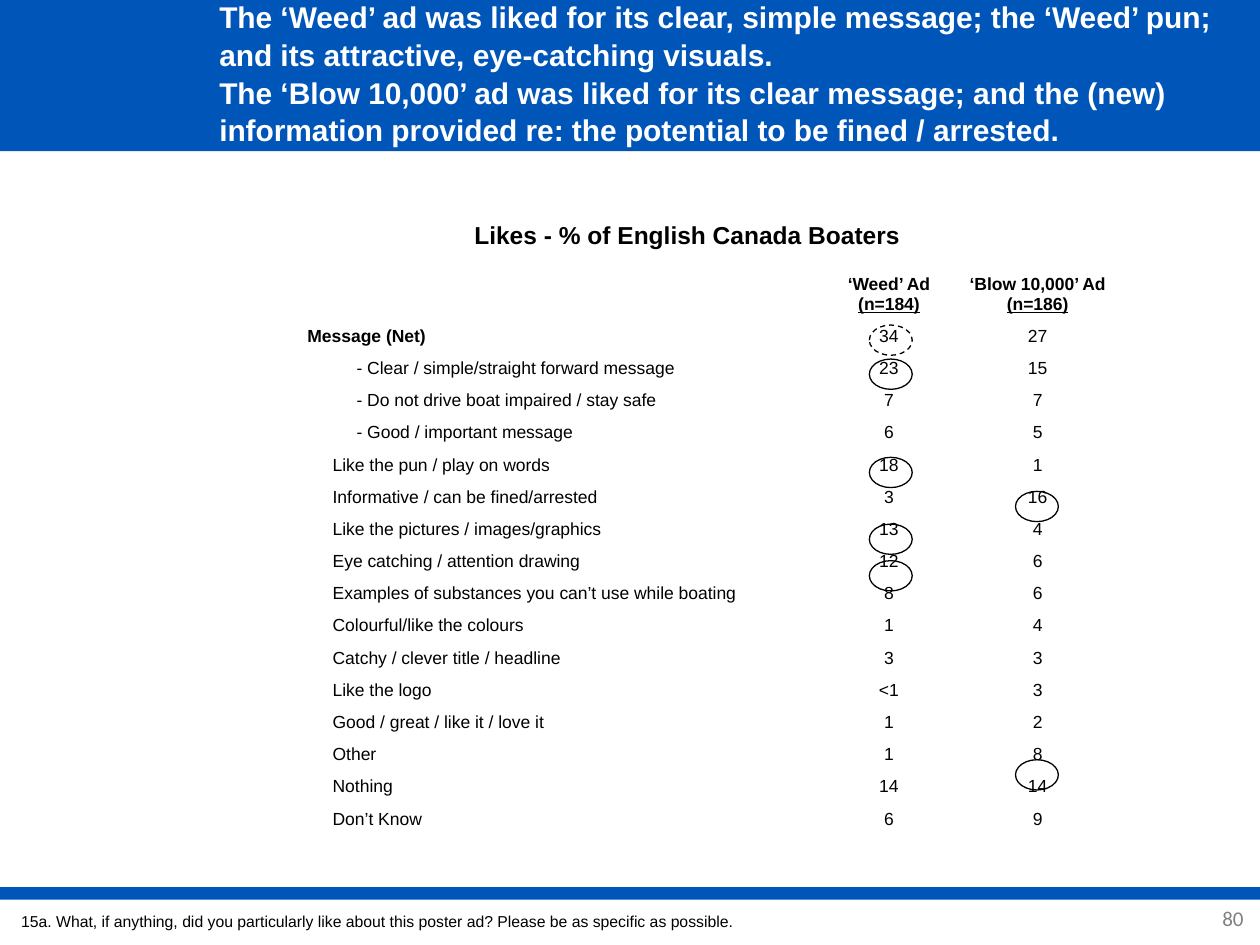
from copy import deepcopy

from pptx import Presentation
from pptx.dml.color import RGBColor
from pptx.enum.dml import MSO_LINE
from pptx.enum.shapes import MSO_SHAPE
from pptx.enum.text import MSO_ANCHOR, MSO_AUTO_SIZE, PP_ALIGN
from pptx.oxml.ns import qn
from pptx.util import Inches, Pt

LEFT, CENTER, RIGHT = PP_ALIGN.LEFT, PP_ALIGN.CENTER, PP_ALIGN.RIGHT
TOP, MIDDLE = MSO_ANCHOR.TOP, MSO_ANCHOR.MIDDLE
RECTANGLE, OVAL = MSO_SHAPE.RECTANGLE, MSO_SHAPE.OVAL
DASH = MSO_LINE.DASH
NO_AUTOFIT = MSO_AUTO_SIZE.NONE

COLORS = {"blue": "0055B9", "white": "FFFFFF", "black": "000000", "gray": "808080"}

TITLE = (
    "The ‘Weed’ ad was liked for its clear, simple message; the ‘Weed’ pun; "
    "and its attractive, eye-catching visuals.\v"
    "The ‘Blow 10,000’ ad was liked for its clear message; and the (new) "
    "information provided re: the potential to be fined / arrested."
)
QUESTION = (
    "15a. What, if anything, did you particularly like about this poster ad? "
    "Please be as specific as possible."
)
ADS = [("‘Weed’ Ad ", "(n=184)"), ("‘Blow 10,000’ Ad ", "(n=186)")]
NET, SUB, ITEM = 0, 0.39, 0.2
LIKES = [
    (NET, "Message (Net)", "34", "27"),
    (SUB, "- Clear / simple/straight forward message", "23", "15"),
    (SUB, "- Do not drive boat impaired / stay safe", "7", "7"),
    (SUB, "- Good / important message", "6", "5"),
    (ITEM, "Like the pun / play on words", "18", "1"),
    (ITEM, "Informative / can be fined/arrested", "3", "16"),
    (ITEM, "Like the pictures / images/graphics", "13", "4"),
    (ITEM, "Eye catching / attention drawing", "12", "6"),
    (ITEM, "Examples of substances you can’t use while boating", "8", "6"),
    (ITEM, "Colourful/like the colours", "1", "4"),
    (ITEM, "Catchy / clever title / headline", "3", "3"),
    (ITEM, "Like the logo", "<1", "3"),
    (ITEM, "Good / great / like it / love it", "1", "2"),
    (ITEM, "Other", "1", "8"),
    (ITEM, "Nothing", "14", "14"),
    (ITEM, "Don’t Know", "6", "9"),
]
COLUMN_WIDTHS = [4.19, 1.05, 1.31]
HEADER_HEIGHT, ROW_HEIGHT = 0.4, 0.25
WEED_X, BLOW_X = 6.9, 8.06
MARKS = [
    (BLOW_X, 6.03, None),
    (BLOW_X, 3.9, None),
    (WEED_X, 2.58, DASH),
    (WEED_X, 2.85, None),
    (WEED_X, 3.63, None),
    (WEED_X, 4.16, None),
    (WEED_X, 4.45, None),
]


class SlideBuilder:
    def __init__(self, slide, font="Arial"):
        self.slide = slide
        self.font = font

    def format_run(self, run, color="black", **values):
        for name, value in {"name": self.font, "bold": False, **values}.items():
            setattr(run.font, name, value)
        run.font.color.rgb = RGBColor.from_string(COLORS[color])

    def fill_paragraph(self, paragraph, text, align=LEFT, **values):
        paragraph.text = text
        paragraph.alignment = align
        for run in paragraph.runs:
            self.format_run(run, **values)
        for line_break in paragraph._p.findall(qn("a:br")):
            line_break.append(deepcopy(paragraph.runs[0]._r.rPr))

    def title(self, box, text, **values):
        title = self.slide.shapes.title
        title.left, title.top, title.width, title.height = map(Inches, box)
        self.slide.shapes._spTree.append(title._element)
        frame = title.text_frame
        frame.auto_size = NO_AUTOFIT
        frame.vertical_anchor = MIDDLE
        paragraph = frame.paragraphs[0]
        self.fill_paragraph(paragraph, text, **values)
        paragraph.line_spacing = 1.05

    def text(self, box, text, anchor=MIDDLE, margins=(0.1, 0.05, 0.1, 0.05), **values):
        frame = self.slide.shapes.add_textbox(*map(Inches, box)).text_frame
        frame.word_wrap = True
        frame.vertical_anchor = anchor
        for side, margin in zip(("left", "top", "right", "bottom"), margins):
            setattr(frame, f"margin_{side}", Inches(margin))
        self.fill_paragraph(frame.paragraphs[0], text, **values)

    def bar(self, box):
        shape = self.slide.shapes.add_shape(RECTANGLE, *map(Inches, box))
        shape.shadow.inherit = False
        shape.fill.solid()
        shape.fill.fore_color.rgb = RGBColor.from_string(COLORS["blue"])
        shape.line.fill.background()

    def mark(self, left, top, dash):
        shape = self.slide.shapes.add_shape(OVAL, *map(Inches, (left, top, 0.34, 0.24)))
        shape.shadow.inherit = False
        shape.fill.background()
        shape.line.color.rgb = RGBColor.from_string(COLORS["black"])
        shape.line.width = Pt(0.75)
        if dash:
            shape.line.dash_style = dash

    def cell(self, cell, text, indent=0, **values):
        cell.fill.background()
        cell.vertical_anchor = MIDDLE
        paragraph = cell.text_frame.paragraphs[0]
        self.fill_paragraph(paragraph, text, size=Pt(10), **values)
        if indent:
            paragraph._p.get_or_add_pPr().set("marL", str(Inches(indent)))
        return paragraph

    def table(self, left, top):
        heights = [HEADER_HEIGHT] + [ROW_HEIGHT] * len(LIKES)
        box = (left, top, sum(COLUMN_WIDTHS), sum(heights))
        table = self.slide.shapes.add_table(
            len(heights), len(COLUMN_WIDTHS), *map(Inches, box)
        ).table
        table.first_row = table.horz_banding = False
        for column, width in zip(table.columns, COLUMN_WIDTHS):
            column.width = Inches(width)
        for row, height in zip(table.rows, heights):
            row.height = Inches(height)
        self.cell(table.cell(0, 0), "")
        for column, (ad, base) in enumerate(ADS, 1):
            paragraph = self.cell(table.cell(0, column), ad, align=CENTER, bold=True)
            run = paragraph.add_run()
            run.text = base
            self.format_run(run, size=Pt(10), bold=True, underline=True)
        for row, (indent, label, *shares) in enumerate(LIKES, 1):
            self.cell(table.cell(row, 0), label, indent, bold=indent == NET)
            for column, share in enumerate(shares, 1):
                self.cell(table.cell(row, column), share, align=CENTER)


def main():
    presentation = Presentation()
    presentation.slide_width = Inches(10)
    presentation.slide_height = Inches(7.5)
    builder = SlideBuilder(presentation.slides.add_slide(presentation.slide_layouts[5]))

    builder.bar((0, -0.03, 10, 1.23))
    builder.bar((0, 7.04, 10, 0.1))
    builder.table(2.34, 2.13)
    builder.title((1.64, 0, 8.12, 1.15), TITLE, size=Pt(17.1), color="white", bold=True)
    builder.text(
        (9.36, 7.09, 0.63, 0.4), "80", margins=(0.04, 0.04, 0.12, 0.04),
        align=RIGHT, name="Calibri", size=Pt(12), color="gray",
    )
    builder.text(
        (2.34, 1.7, 6.23, 0.46), "Likes - % of English Canada Boaters",
        anchor=TOP, align=CENTER, size=Pt(14), bold=True,
    )
    builder.text((0.07, 7.12, 7.24, 0.38), QUESTION, size=Pt(9))
    for mark in MARKS:
        builder.mark(*mark)

    presentation.save("out.pptx")


if __name__ == "__main__":
    main()
